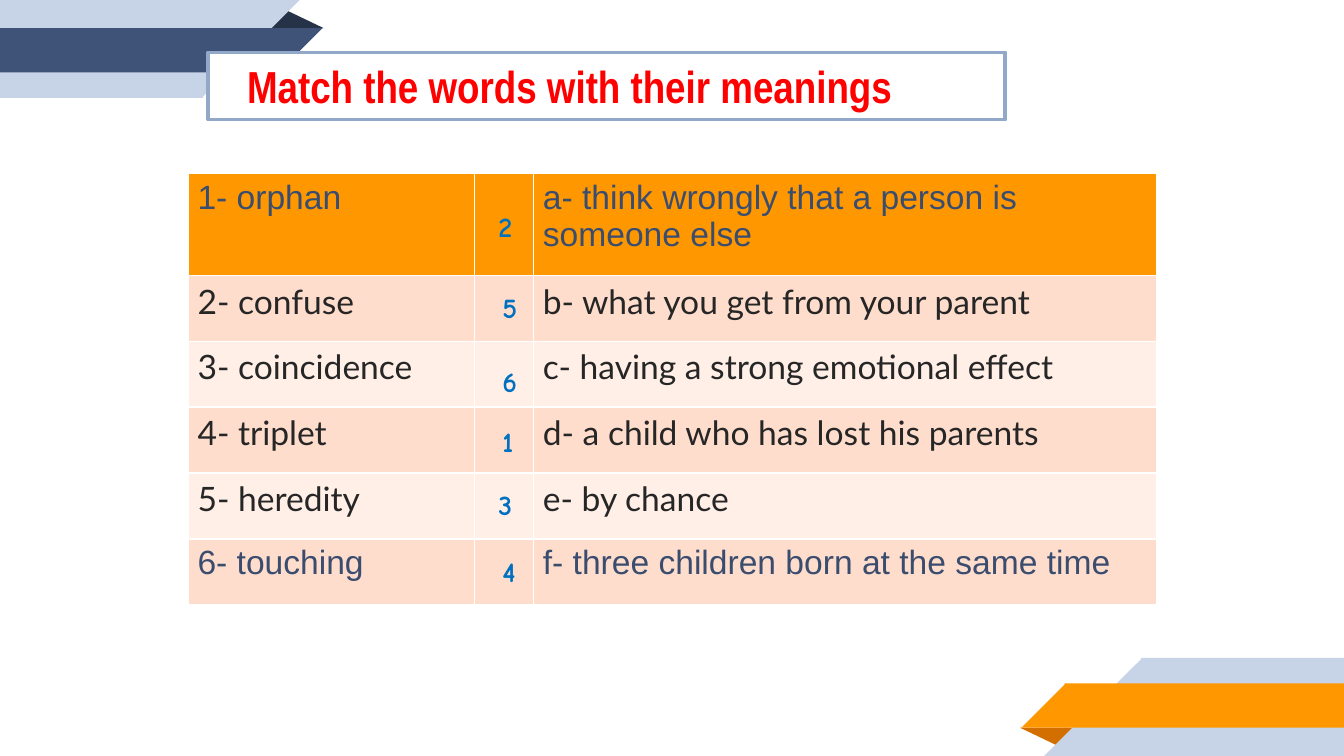
from dataclasses import dataclass

from lxml import etree
from pptx import Presentation
from pptx.dml.color import RGBColor
from pptx.enum.shapes import MSO_SHAPE
from pptx.enum.text import MSO_ANCHOR, MSO_AUTO_SIZE, PP_ALIGN
from pptx.oxml.ns import qn
from pptx.util import Inches, Pt

RECTANGLE = MSO_SHAPE.RECTANGLE
RIGHT_TRIANGLE = MSO_SHAPE.RIGHT_TRIANGLE
TRIANGLE = MSO_SHAPE.ISOSCELES_TRIANGLE
LEFT = PP_ALIGN.LEFT
TOP, MIDDLE = MSO_ANCHOR.TOP, MSO_ANCHOR.MIDDLE
FIT_SHAPE = MSO_AUTO_SIZE.SHAPE_TO_FIT_TEXT

SLIDE_WIDTH = 10
SLIDE_HEIGHT = SLIDE_WIDTH * 9 / 16
WHITE, PALE_BLUE, NAVY, ORANGE = "FFFFFF", "C7D3E6", "3F5378", "FF9800"
SLATE, CHARCOAL = "3B4D6F", "262626"
DARK_PEACH, LIGHT_PEACH = "FFDDCC", "FFEFE7"
COLUMN_WIDTHS = (2.13, 0.44, 4.64)
ROW_HEIGHTS = (0.76,) + (0.49,) * 5


@dataclass(frozen=True)
class RibbonPart:
    preset: MSO_SHAPE
    left: float
    top: float
    width: float
    height: float
    color: str
    rotation: int = 0


@dataclass(frozen=True)
class WordRow:
    word: str
    meaning: str
    font: str
    color: str
    fill: str


@dataclass(frozen=True)
class Answer:
    number: str
    left: float
    top: float


WORD_ROWS = (
    WordRow("1- orphan", "a- think wrongly that a person is someone else", "Arial", SLATE, ORANGE),
    WordRow("2- confuse", "b- what you get from your parent", "Lato", CHARCOAL, DARK_PEACH),
    WordRow("3- coincidence", "c- having a strong emotional effect", "Lato", CHARCOAL, LIGHT_PEACH),
    WordRow("4- triplet", "d- a child who has lost his parents", "Lato", CHARCOAL, DARK_PEACH),
    WordRow("5- heredity", "e- by chance", "Lato", CHARCOAL, LIGHT_PEACH),
    WordRow("6- touching", "f- three children born at the same time", "Arial", SLATE, DARK_PEACH),
)
ANSWERS = (
    Answer("1", 3.64, 3.11),
    Answer("2", 3.61, 1.51),
    Answer("3", 3.61, 3.58),
    Answer("4", 3.64, 4.08),
    Answer("5", 3.64, 2.11),
    Answer("6", 3.64, 2.66),
)


def rgb(color: str) -> RGBColor:
    return RGBColor.from_string(color)


def write_text(text_frame, text: str, *, font: str, size: float, color: str,
               bold: bool = False, space_before: float = 0, indent: float = 0) -> None:
    text_frame.word_wrap = True
    paragraph = text_frame.paragraphs[0]
    paragraph.alignment = LEFT
    paragraph.space_before = Pt(space_before)
    if indent:
        paragraph._p.get_or_add_pPr().set("marL", str(Inches(indent)))
    run = paragraph.add_run()
    run.text = text
    run.font.name = font
    run.font.size = Pt(size)
    run.font.bold = bold
    run.font.color.rgb = rgb(color)


def add_block(slide, preset: MSO_SHAPE, left: float, top: float,
              width: float, height: float, color: str):
    shape = slide.shapes.add_shape(preset, Inches(left), Inches(top), Inches(width), Inches(height))
    shape.shadow.inherit = False
    shape.fill.solid()
    shape.fill.fore_color.rgb = rgb(color)
    shape.line.fill.background()
    return shape


def add_ribbon(slide, color: str, fold_color: str, turned: bool = False) -> None:
    parts = (
        RibbonPart(TRIANGLE, 1.98, 0.07, 0.43, 0.14, fold_color),
        RibbonPart(RECTANGLE, 0, 0, 1.51, 0.73, PALE_BLUE),
        RibbonPart(RIGHT_TRIANGLE, 1.5, 0, 0.73, 0.73, PALE_BLUE, 90),
        RibbonPart(RECTANGLE, 0, 0.21, 2.08, 0.33, color),
        RibbonPart(RIGHT_TRIANGLE, 2.07, 0.21, 0.33, 0.33, color, 90),
    )
    for part in parts:
        left, top, rotation = part.left, part.top, part.rotation
        if turned:
            left = SLIDE_WIDTH - left - part.width
            top = SLIDE_HEIGHT - top - part.height
            rotation += 180
        shape = add_block(slide, part.preset, left, top, part.width, part.height, part.color)
        shape.rotation = rotation
        if part.preset == TRIANGLE:
            shape.adjustments[0] = 0.32


def add_title(slide, text: str) -> None:
    shape = add_block(slide, RECTANGLE, 1.55, 0.39, 5.93, 0.5, WHITE)
    shape.line.color.rgb = rgb("92A8C8")
    shape.line.width = Pt(2)
    shape.text_frame.vertical_anchor = MIDDLE
    shape.text_frame.auto_size = FIT_SHAPE
    write_text(shape.text_frame, text, font="Arial Narrow", size=24,
               color="FF0000", bold=True, indent=0.19)


def set_borders(cell) -> None:
    properties = cell._tc.get_or_add_tcPr()
    for position, tag in enumerate(("a:lnL", "a:lnR", "a:lnT", "a:lnB")):
        border = etree.Element(qn(tag), w=str(Pt(1)))
        fill = etree.SubElement(border, qn("a:solidFill"))
        etree.SubElement(fill, qn("a:srgbClr"), val=WHITE)
        properties.insert(position, border)


def add_word_table(slide) -> None:
    table = slide.shapes.add_table(
        len(WORD_ROWS), len(COLUMN_WIDTHS), Inches(1.4), Inches(1.29),
        Inches(sum(COLUMN_WIDTHS)), Inches(sum(ROW_HEIGHTS))).table
    for column, width in zip(table.columns, COLUMN_WIDTHS):
        column.width = Inches(width)
    for row, height, entry in zip(table.rows, ROW_HEIGHTS, WORD_ROWS):
        row.height = Inches(height)
        for cell, text in zip(row.cells, (entry.word, "", entry.meaning)):
            cell.margin_left = cell.margin_right = Inches(0.07)
            cell.margin_top = cell.margin_bottom = Inches(0.04)
            cell.vertical_anchor = TOP
            cell.fill.solid()
            cell.fill.fore_color.rgb = rgb(entry.fill)
            set_borders(cell)
            if text:
                write_text(cell.text_frame, text, font=entry.font, size=18, color=entry.color)


def add_answer(slide, answer: Answer) -> None:
    box = slide.shapes.add_textbox(
        Inches(answer.left), Inches(answer.top), Inches(0.34), Inches(0.35))
    box.text_frame.auto_size = FIT_SHAPE
    write_text(box.text_frame, answer.number, font="Comic Neue", size=15,
               color="0070C0", bold=True, space_before=0.8)


def main() -> None:
    presentation = Presentation()
    presentation.slide_width = Inches(SLIDE_WIDTH)
    presentation.slide_height = Inches(SLIDE_HEIGHT)
    slide = presentation.slides.add_slide(presentation.slide_layouts[6])
    add_ribbon(slide, NAVY, "263248")
    add_ribbon(slide, ORANGE, "D26F00", turned=True)
    add_title(slide, "Match the words with their meanings")
    add_word_table(slide)
    for answer in ANSWERS:
        add_answer(slide, answer)
    presentation.save("out.pptx")


if __name__ == "__main__":
    main()
